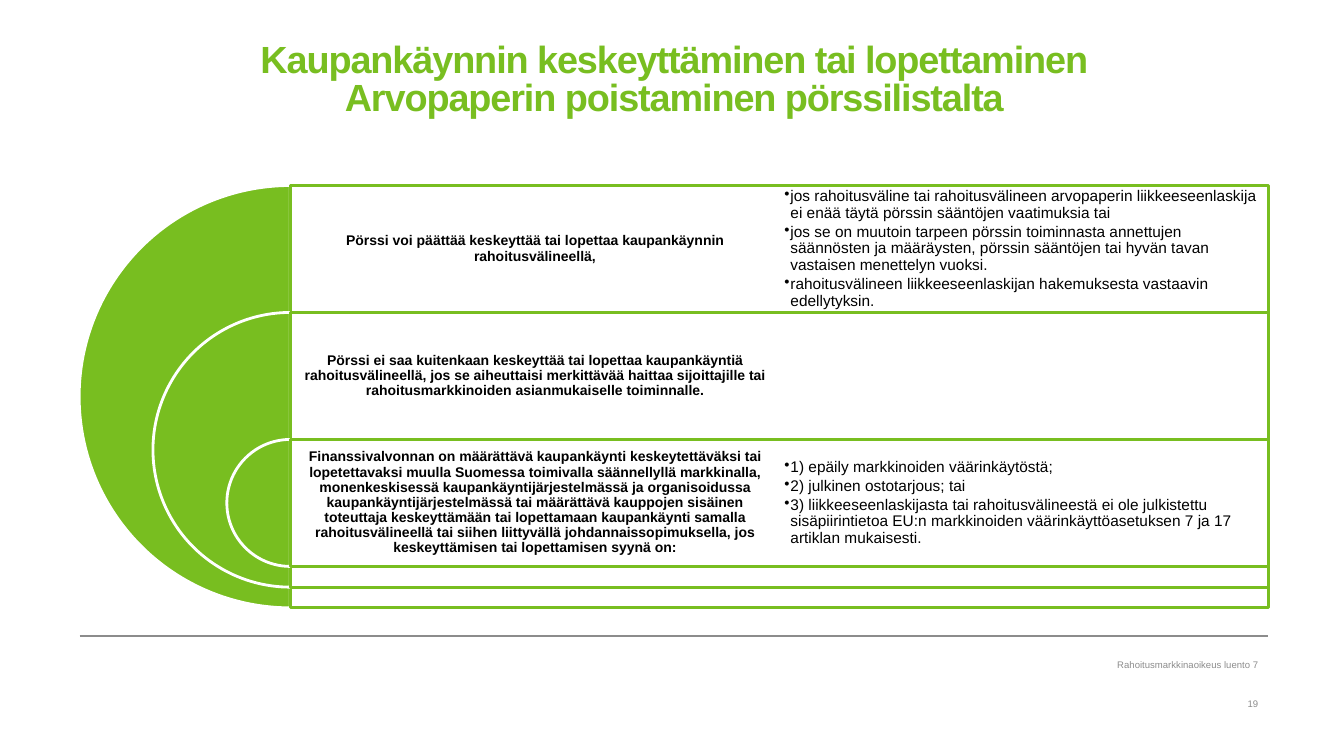
from dataclasses import dataclass
from typing import Any

from lxml.etree import SubElement
from pptx import Presentation
from pptx.dml.color import RGBColor
from pptx.enum.shapes import MSO_CONNECTOR as Connector, MSO_SHAPE as Preset
from pptx.enum.text import MSO_ANCHOR as Anchor, MSO_AUTO_SIZE as AutoSize, PP_ALIGN as Align
from pptx.oxml.ns import qn
from pptx.util import Inches, Pt


@dataclass(frozen=True)
class Theme:
    font: str = "Arial"
    green: RGBColor = RGBColor(0x78, 0xBE, 0x20)
    white: RGBColor = RGBColor(0xFF, 0xFF, 0xFF)
    black: RGBColor = RGBColor(0, 0, 0)
    grey: RGBColor = RGBColor(0x8C, 0x8C, 0x8C)
    title_size: float = 27
    heading_size: float = 10
    detail_size: float = 11
    footer_size: float = 6.8
    outline: float = 2


@dataclass(frozen=True)
class Box:
    left: float
    top: float
    width: float
    height: float

    def lengths(self) -> tuple:
        return tuple(Inches(v) for v in (self.left, self.top, self.width, self.height))


@dataclass(frozen=True)
class TextStyle:
    size: float
    color: RGBColor
    align: Align
    insets: tuple[float, float, float, float]
    anchor: Anchor = Anchor.MIDDLE
    bold: bool = False
    line_spacing: float = 1.0
    space_after: float = 0
    bulleted: bool = False


@dataclass(frozen=True)
class Rule:
    heading: str
    details: tuple[str, ...] = ()


THEME = Theme()
TITLE = TextStyle(THEME.title_size, THEME.green, Align.CENTER, (0, 0, 0, 0), Anchor.TOP, True, 0.85)
HEADING = TextStyle(THEME.heading_size, THEME.black, Align.CENTER, (0.04,) * 4,
                    bold=True, line_spacing=0.9, space_after=3.5)
DETAIL = TextStyle(THEME.detail_size, THEME.black, Align.LEFT, (0.05,) * 4,
                   line_spacing=0.9, space_after=1.65, bulleted=True)
FOOTER = TextStyle(THEME.footer_size, THEME.grey, Align.RIGHT, (0.1, 0.05, 0, 0.05))

TITLE_LINES = ("Kaupankäynnin keskeyttäminen tai lopettaminen",
               "Arvopaperin poistaminen pörssilistalta")
FOOTERS = (
    ("Rahoitusmarkkinaoikeus luento 7", Box(7.2, 6.51, 5.28, 0.17)),
    ("19", Box(7.2, 6.89, 5.28, 0.18)),
)
RULES = (
    Rule(
        "Pörssi voi päättää keskeyttää tai lopettaa kaupankäynnin rahoitusvälineellä,",
        (
            "jos rahoitusväline tai rahoitusvälineen arvopaperin liikkeeseenlaskija ei enää täytä "
            "pörssin sääntöjen vaatimuksia tai",
            "jos se on muutoin tarpeen pörssin toiminnasta annettujen säännösten ja määräysten, "
            "pörssin sääntöjen tai hyvän tavan vastaisen menettelyn vuoksi.",
            "rahoitusvälineen liikkeeseenlaskijan hakemuksesta vastaavin edellytyksin.",
        ),
    ),
    Rule(
        "Pörssi ei saa kuitenkaan keskeyttää tai lopettaa kaupankäyntiä rahoitusvälineellä, "
        "jos se aiheuttaisi merkittävää haittaa sijoittajille tai rahoitusmarkkinoiden "
        "asianmukaiselle toiminnalle.",
    ),
    Rule(
        "Finanssivalvonnan on määrättävä kaupankäynti keskeytettäväksi tai lopetettavaksi "
        "muulla Suomessa toimivalla säännellyllä markkinalla, monenkeskisessä "
        "kaupankäyntijärjestelmässä ja organisoidussa kaupankäyntijärjestelmässä tai määrättävä "
        "kauppojen sisäinen toteuttaja keskeyttämään tai lopettamaan kaupankäynti samalla "
        "rahoitusvälineellä tai siihen liittyvällä johdannaissopimuksella, jos keskeyttämisen "
        "tai lopettamisen syynä on:",
        (
            "1) epäily markkinoiden väärinkäytöstä;",
            "2) julkinen ostotarjous; tai",
            "3) liikkeeseenlaskijasta tai rahoitusvälineestä ei ole julkistettu sisäpiirintietoa "
            "EU:n markkinoiden väärinkäyttöasetuksen 7 ja 17 artiklan mukaisesti.",
        ),
    ),
)

CENTER_X, TOP = 2.88, 1.84
ROW_HEIGHT, COLUMN_WIDTH = 1.26, 4.85
OUTER_DIAMETER, DIAMETER_STEP = 4.19, 1.465


def set_formats(target: Any, formats: dict[str, Any]) -> None:
    for name, value in formats.items():
        setattr(target, name, value)


def format_frame(frame: Any, style: TextStyle) -> None:
    left, top, right, bottom = (Inches(inset) for inset in style.insets)
    set_formats(frame, {
        "word_wrap": True, "auto_size": AutoSize.NONE, "vertical_anchor": style.anchor,
        "margin_left": left, "margin_top": top, "margin_right": right, "margin_bottom": bottom,
    })


def format_paragraph(paragraph: Any, style: TextStyle) -> None:
    set_formats(paragraph, {
        "alignment": style.align, "line_spacing": style.line_spacing,
        "space_before": Pt(0), "space_after": Pt(style.space_after),
    })
    for run in paragraph.runs:
        set_formats(run.font, {"name": THEME.font, "size": Pt(style.size), "bold": style.bold})
        run.font.color.rgb = style.color
    if style.bulleted:
        paragraph.level = 1
        properties = paragraph._p.get_or_add_pPr()
        properties.set("marL", str(Inches(0.06)))
        properties.set("indent", str(-Inches(0.06)))
        SubElement(properties, qn("a:buChar")).set("char", "•")


def add_text(slide: Any, box: Box, texts: tuple[str, ...], style: TextStyle) -> None:
    frame = slide.shapes.add_textbox(*box.lengths()).text_frame
    format_frame(frame, style)
    for index, text in enumerate(texts):
        paragraph = frame.add_paragraph() if index else frame.paragraphs[0]
        paragraph.add_run().text = text
        format_paragraph(paragraph, style)


def add_panel(slide: Any, preset: Preset, box: Box, fill: RGBColor, line: RGBColor) -> Any:
    panel = slide.shapes.add_shape(preset, *box.lengths())
    panel.shadow.inherit = False
    panel.fill.solid()
    panel.fill.fore_color.rgb = fill
    panel.line.color.rgb = line
    panel.line.width = Pt(THEME.outline)
    return panel


def add_title(slide: Any) -> None:
    title = slide.shapes.title
    left, top, width, height = Box(0.79, 0.42, 11.79, 1.31).lengths()
    set_formats(title, {"left": left, "top": top, "width": width, "height": height})
    format_frame(title.text_frame, TITLE)
    paragraph = title.text_frame.paragraphs[0]
    for index, text in enumerate(TITLE_LINES):
        if index:
            paragraph.add_line_break()
        paragraph.add_run().text = text
    format_paragraph(paragraph, TITLE)
    for run in paragraph.runs:
        run.font._element.set("spc", "-80")


def add_rule_layer(slide: Any, index: int, rule: Rule) -> None:
    top = TOP + index * ROW_HEIGHT
    diameter = OUTER_DIAMETER - index * DIAMETER_STEP
    half_disc = add_panel(slide, Preset.PIE, Box(CENTER_X - diameter / 2, top, diameter, diameter),
                          THEME.green, THEME.white)
    half_disc.adjustments[0] = 54
    half_disc.adjustments[1] = 162
    band = add_panel(slide, Preset.RECTANGLE, Box(CENTER_X, top, 2 * COLUMN_WIDTH, diameter),
                     THEME.white, THEME.green)
    color = band._element.spPr.find(qn("a:solidFill")).find(qn("a:srgbClr"))
    SubElement(color, qn("a:alpha")).set("val", "90000")
    add_text(slide, Box(CENTER_X, top, COLUMN_WIDTH, ROW_HEIGHT), (rule.heading,), HEADING)


def add_footer_line(slide: Any) -> None:
    start_x, end_x, y = Inches(0.79), Inches(12.58), Inches(6.31)
    divider = slide.shapes.add_connector(Connector.STRAIGHT, start_x, y, end_x, y)
    divider.line.color.rgb = THEME.grey
    divider.line.width = Pt(1)
    SubElement(divider._element.spPr, qn("a:effectLst"))


def main() -> None:
    deck = Presentation()
    set_formats(deck, {"slide_width": Inches(13.33), "slide_height": Inches(7.5)})
    slide = deck.slides.add_slide(deck.slide_layouts[5])
    add_footer_line(slide)
    add_title(slide)
    for text, box in FOOTERS:
        add_text(slide, box, (text,), FOOTER)
    for index, rule in enumerate(RULES):
        add_rule_layer(slide, index, rule)
    for index, rule in enumerate(RULES):
        if rule.details:
            box = Box(CENTER_X + COLUMN_WIDTH, TOP + index * ROW_HEIGHT, COLUMN_WIDTH, ROW_HEIGHT)
            add_text(slide, box, rule.details, DETAIL)
    deck.save("out.pptx")


if __name__ == "__main__":
    main()
